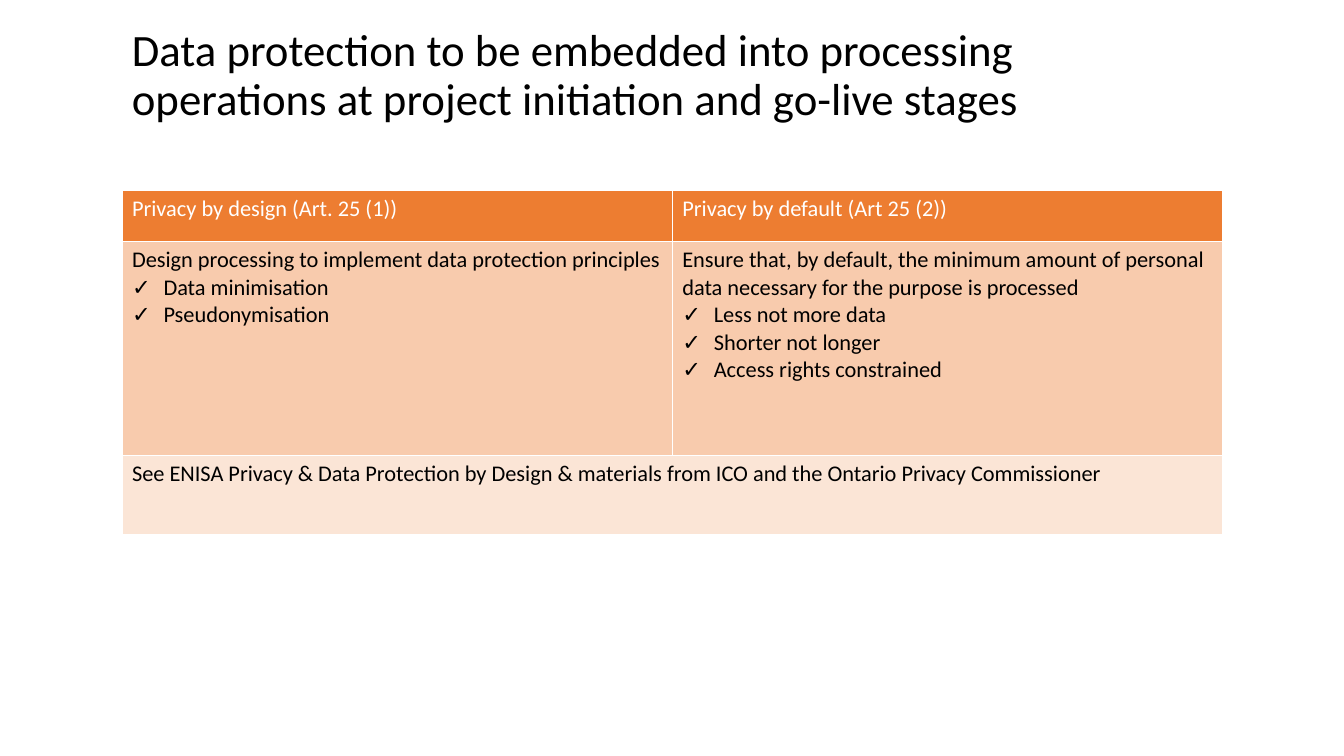
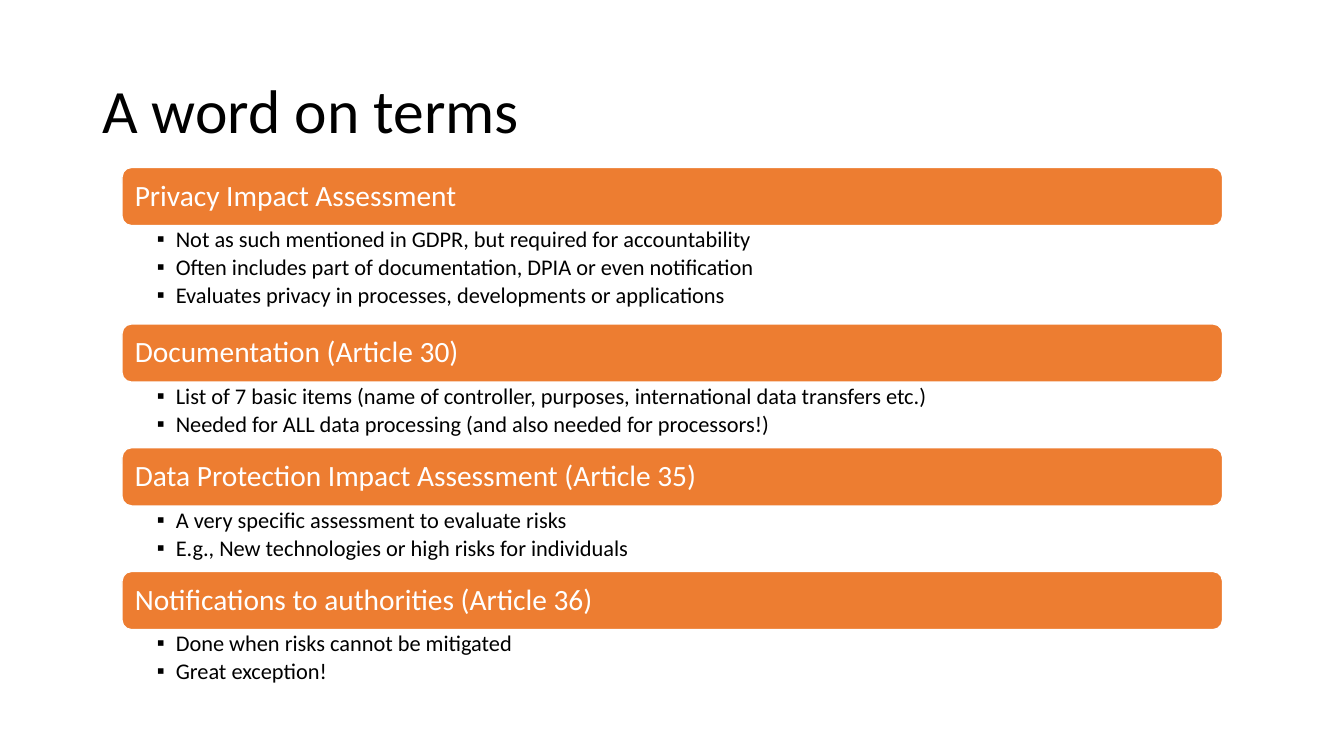
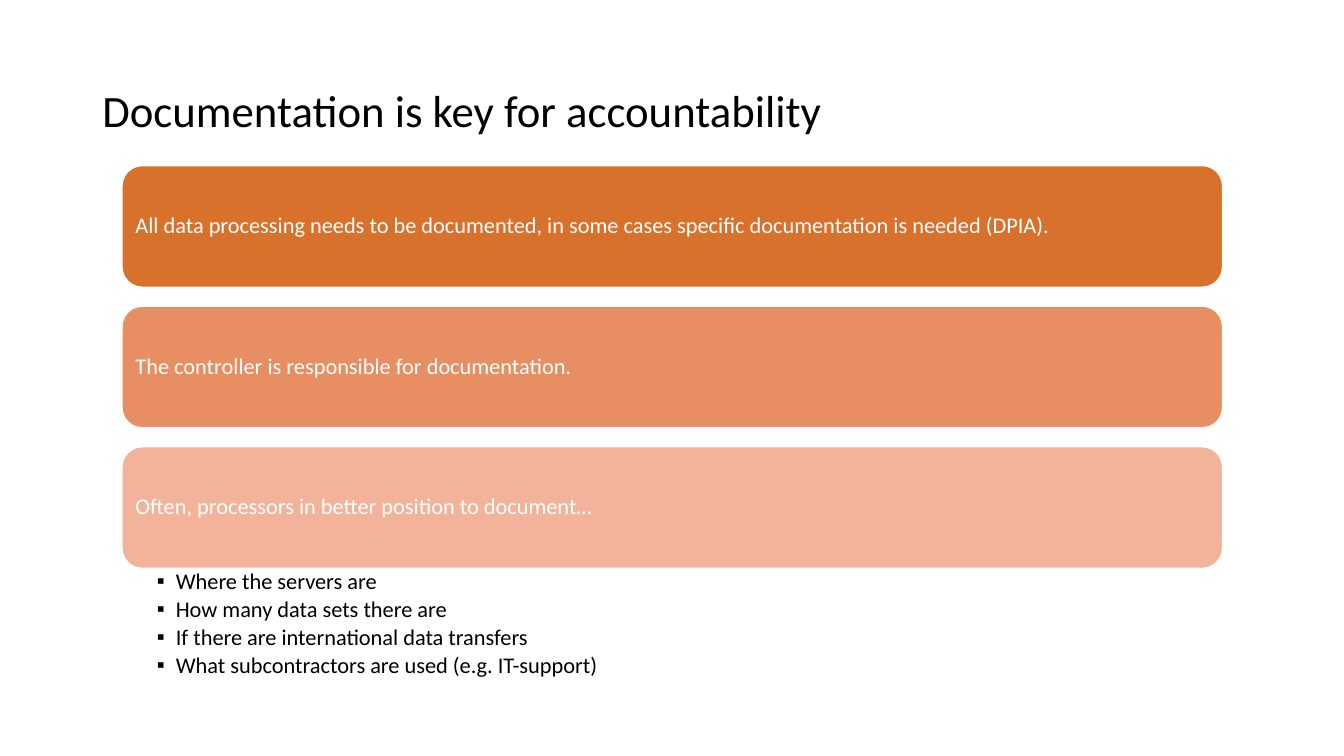
from dataclasses import dataclass

from lxml import etree
from pptx import Presentation
from pptx.dml.color import RGBColor
from pptx.enum.shapes import MSO_SHAPE
from pptx.enum.text import MSO_ANCHOR, PP_ALIGN
from pptx.oxml.ns import qn
from pptx.util import Pt

ROUND_RECT = MSO_SHAPE.ROUNDED_RECTANGLE
LEFT = PP_ALIGN.LEFT
TOP, MIDDLE = MSO_ANCHOR.TOP, MSO_ANCHOR.MIDDLE


@dataclass(frozen=True)
class Theme:
    font: str = "Calibri"
    bullet_font: str = "Arial"
    text: str = "000000"
    white: str = "FFFFFF"
    accent: str = "ED7D31"
    accent_mid: str = "F8CBAD"
    accent_pale: str = "FBE5D6"
    fades: tuple[str, ...] = ("D7712C", "E78F62", "F3B39B")
    title_size: float = 44
    title_small: float = 32
    heading_size: float = 21
    body_size: float = 16
    tight: float = 0.9  # line spacing outside the table
    rule: float = 1


@dataclass(frozen=True)
class Box:
    x: float
    y: float
    w: float
    h: float

    def emu(self) -> tuple:
        return Pt(self.x), Pt(self.y), Pt(self.w), Pt(self.h)


@dataclass(frozen=True)
class Section:
    heading: str
    bullets: tuple[str, ...]


@dataclass(frozen=True)
class Cell:
    text: str
    fill: str
    color: str
    checks: tuple[str, ...] = ()


T = Theme()
BODY_X, BODY_W = 87.1, 786.2
TITLE_BOX = Box(66, 28.75, 828, 104.4)
HIGH_TITLE_BOX = Box(BODY_X, 11.5, BODY_W, 86.4)

TABLE_TOP = 136
ROW_HEIGHTS = (36.5, 152.9, 56.7)
TABLE_ROWS = (
    (Cell("Privacy by design (Art. 25 (1))", T.accent, T.white),
     Cell("Privacy by default (Art 25 (2))", T.accent, T.white)),
    (Cell("Design processing to implement data protection principles",
          T.accent_mid, T.text, ("Data minimisation", "Pseudonymisation")),
     Cell("Ensure that, by default, the minimum amount of personal data "
          "necessary for the purpose is processed", T.accent_mid, T.text,
          ("Less not more data", "Shorter not longer",
           "Access rights constrained"))),
    (Cell("See ENISA Privacy & Data Protection by Design & materials from "
          "ICO and the Ontario Privacy Commissioner", T.accent_pale, T.text),),
)

SECTIONS_TOP, HEADING_H = 119.6, 41.6
SECTIONS = (
    Section("Privacy Impact Assessment", (
        "Not as such mentioned in GDPR, but required for accountability",
        "Often includes part of documentation, DPIA or even notification",
        "Evaluates privacy in processes, developments or applications")),
    Section("Documentation (Article 30)", (
        "List of 7 basic items (name of controller, purposes, "
        "international data transfers etc.)",
        "Needed for ALL data processing (and also needed for processors!)")),
    Section("Data Protection Impact Assessment (Article 35)", (
        "A very specific assessment to evaluate risks",
        "E.g., New technologies or high risks for individuals")),
    Section("Notifications to authorities (Article 36)", (
        "Done when risks cannot be mitigated",
        "Great exception!")),
)

BANDS_TOP, BAND_H, BAND_STEP = 118.3, 86.9, 100.4
BANDS = (
    "All data processing needs to be documented, in some cases specific "
    "documentation is needed (DPIA).",
    "The controller is responsible for documentation.",
    "Often, processors in better position to document…",
)
BAND_BULLETS = (
    "Where the servers are",
    "How many data sets there are",
    "If there are international data transfers",
    "What subcontractors are used (e.g. IT-support)",
)


# Text
def write(p, text: str, *, size: float = T.body_size, color: str = T.text,
          spacing: float = 1, after: float = 0, bullet: str = "",
          indent: float = 0) -> None:
    p.alignment, p.line_spacing, p.space_after = LEFT, spacing, Pt(after)
    r = p.add_run()
    r.text = text
    r.font.name, r.font.size, r.font.bold = T.font, Pt(size), False
    r.font.color.rgb = RGBColor.from_string(color)
    if bullet:
        pPr = p._p.get_or_add_pPr()
        pPr.set("marL", str(Pt(indent)))
        pPr.set("indent", str(-Pt(indent)))
        etree.SubElement(pPr, qn("a:buFont")).set("typeface", T.bullet_font)
        etree.SubElement(pPr, qn("a:buChar")).set("char", bullet)


def set_frame(tf, anchor, left: float = 7.2, top: float = 3.6,
              right: float = 7.2) -> None:
    tf.word_wrap, tf.vertical_anchor = True, anchor
    tf.margin_left, tf.margin_right = Pt(left), Pt(right)
    tf.margin_top = tf.margin_bottom = Pt(top)


def add_title(s, text: str, size: float, box: Box = TITLE_BOX) -> None:
    tf = s.shapes.add_textbox(*box.emu()).text_frame
    set_frame(tf, MIDDLE)
    write(tf.paragraphs[0], text, size=size, spacing=T.tight)


def add_bullets(s, items: tuple[str, ...], box: Box) -> None:
    tf = s.shapes.add_textbox(*box.emu()).text_frame
    set_frame(tf, TOP, left=25, top=2, right=11)
    for i, item in enumerate(items):
        p = tf.add_paragraph() if i else tf.paragraphs[0]
        write(p, item, spacing=T.tight, after=2.7, bullet="▪", indent=13.5)


# Shapes and table cells
def add_bar(s, text: str, box: Box, fill: str, size: float) -> None:
    sp = s.shapes.add_shape(ROUND_RECT, *box.emu())
    sp.shadow.inherit = False
    sp.fill.solid()
    sp.fill.fore_color.rgb = RGBColor.from_string(fill)
    sp.line.color.rgb = RGBColor.from_string(T.white)
    sp.line.width = Pt(T.rule)
    # The rounded outline already insets its text by part of the corner
    inset = 8.8 - box.h * 0.16667 * 0.29289
    set_frame(sp.text_frame, MIDDLE, left=inset + box.h * 0.01, top=2)
    write(sp.text_frame.paragraphs[0], text, size=size, color=T.white,
          spacing=T.tight)


def set_borders(cell) -> None:
    tcPr = cell._tc.get_or_add_tcPr()
    for side in ("a:lnL", "a:lnR", "a:lnT", "a:lnB"):
        ln = etree.SubElement(tcPr, qn(side), w=str(Pt(T.rule)))
        fill = etree.SubElement(ln, qn("a:solidFill"))
        etree.SubElement(fill, qn("a:srgbClr")).set("val", T.white)


def fill_cell(cell, content: Cell) -> None:
    set_borders(cell)
    cell.fill.solid()
    cell.fill.fore_color.rgb = RGBColor.from_string(content.fill)
    tf = cell.text_frame
    write(tf.paragraphs[0], content.text, color=content.color)
    for check in content.checks:
        write(tf.add_paragraph(), check, color=content.color,
              bullet="✓", indent=22.5)


# Slides
def build_design_table(s) -> None:
    add_title(s, "Data protection to be embedded into processing operations "
              "at project initiation and go-live stages",
              T.title_small, HIGH_TITLE_BOX)
    box = Box(BODY_X, TABLE_TOP, BODY_W, sum(ROW_HEIGHTS))
    tbl = s.shapes.add_table(len(TABLE_ROWS), 2, *box.emu()).table
    tbl.first_row = tbl.horz_banding = False
    for i, (height, row) in enumerate(zip(ROW_HEIGHTS, TABLE_ROWS)):
        tbl.rows[i].height = Pt(height)
        if len(row) == 1:
            tbl.cell(i, 0).merge(tbl.cell(i, 1))
        for j, content in enumerate(row):
            fill_cell(tbl.cell(i, j), content)


def build_terms(s) -> None:
    add_title(s, "A word on terms", T.title_size)
    y = SECTIONS_TOP
    for section in SECTIONS:
        add_bar(s, section.heading, Box(BODY_X, y, BODY_W, HEADING_H),
                T.accent, T.heading_size)
        y += HEADING_H
        body_h = 23.4 * len(section.bullets)
        add_bullets(s, section.bullets, Box(BODY_X, y, BODY_W, body_h))
        y += body_h


def build_documentation(s) -> None:
    add_title(s, "Documentation is key for accountability", T.title_small)
    for i, (text, fill) in enumerate(zip(BANDS, T.fades)):
        y = BANDS_TOP + i * BAND_STEP
        add_bar(s, text, Box(BODY_X, y, BODY_W, BAND_H), fill, T.body_size)
    add_bullets(s, BAND_BULLETS, Box(BODY_X, 405.2, BODY_W, 93.6))


def main() -> None:
    prs = Presentation()
    prs.slide_width, prs.slide_height = Pt(960), Pt(540)
    for build in (build_design_table, build_terms, build_documentation):
        build(prs.slides.add_slide(prs.slide_layouts[6]))
    prs.save("out.pptx")


if __name__ == "__main__":
    main()
